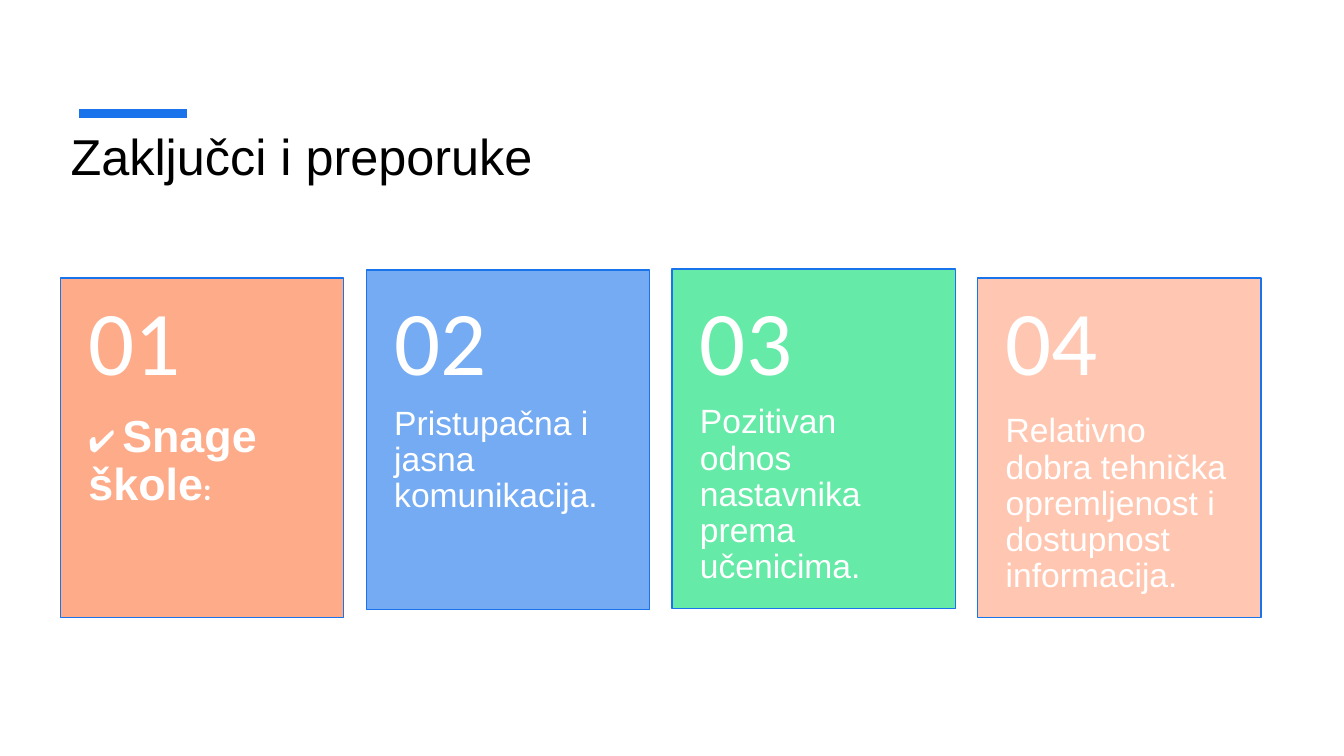
"""Builds the conclusions slide with four numbered cards."""
from lxml import etree
from pptx import Presentation
from pptx.dml.color import RGBColor
from pptx.enum.shapes import MSO_CONNECTOR, MSO_SHAPE
from pptx.enum.text import MSO_ANCHOR, MSO_AUTO_SIZE, PP_ALIGN
from pptx.oxml.ns import qn
from pptx.util import Pt

RECT = MSO_SHAPE.RECTANGLE
STRAIGHT = MSO_CONNECTOR.STRAIGHT
TOP, MIDDLE = MSO_ANCHOR.TOP, MSO_ANCHOR.MIDDLE
NO_FIT = MSO_AUTO_SIZE.NONE
LEFT = PP_ALIGN.LEFT

COLORS = {
    "text": "000000",
    "white": "FFFFFF",
    "blue": "1973EB",
    "orange": "FEAB8A",
    "sky": "75ABF3",
    "green": "65EAA8",
    "peach": "FFC7B1",
}
CARD_X, CARD_Y, CARD_STEP = 43.2, 198.6, 218.4
CARD_W, CARD_H, NUMBER_H = 202.4, 242.6, 97
CARDS = [
    ("orange", 0, [("✔️ ", 22, "Calibri"), ("Snage škole", 32, "Arial"), (":", 22, "Calibri")]),
    ("sky", -5.6, [("Pristupačna i jasna komunikacija.", 24, "Arial")]),
    ("green", -6.4, [("Pozitivan odnos nastavnika prema učenicima.", 24, "Arial")]),
    ("peach", 0, [("Relativno dobra tehnička opremljenost i dostupnost informacija.", 24, "Arial")]),
]


def rgb(name):
    return RGBColor.from_string(COLORS[name])


def add_text(s, x, y, h, runs, anchor, inset_top, inset_bottom):
    tf = s.shapes.add_textbox(Pt(x), Pt(y), Pt(CARD_W), Pt(h)).text_frame
    tf.word_wrap = True
    tf.vertical_anchor = anchor
    tf.margin_left = tf.margin_right = Pt(20)
    tf.margin_top, tf.margin_bottom = Pt(inset_top), Pt(inset_bottom)
    p = tf.paragraphs[0]
    p.line_spacing = 0.9
    p.font.color.rgb = rgb("white")
    p.font.bold = len(runs) > 1
    for text, size, font in runs:
        r = p.add_run()
        r.text = text
        r.font.size = Pt(size)
        r.font.name = font


prs = Presentation()
prs.slide_width, prs.slide_height = Pt(960), Pt(540)
s = prs.slides.add_slide(prs.slide_layouts[5])

title = s.shapes.title
title.left, title.top, title.width, title.height = Pt(43.2), Pt(80), Pt(857.6), Pt(86.4)
tf = title.text_frame
tf.text = "Zaključci i preporuke"
tf.auto_size = NO_FIT
tf.vertical_anchor = TOP
tf.margin_top = Pt(9)
p = tf.paragraphs[0]
p.alignment = LEFT
p.font.name, p.font.size = "Arial", Pt(36)
p.font.color.rgb = rgb("text")

accent = s.shapes.add_connector(STRAIGHT, Pt(56.4), Pt(81.2), Pt(133.4), Pt(81.2))
accent.line.color.rgb = rgb("blue")
accent.line.width = Pt(6)
etree.SubElement(accent._element.spPr, qn("a:effectLst"))

for i, (color, shift, runs) in enumerate(CARDS):
    x, y = CARD_X + i * CARD_STEP, CARD_Y + shift
    card = s.shapes.add_shape(RECT, Pt(x), Pt(y), Pt(CARD_W), Pt(CARD_H))
    card.shadow.inherit = False
    card.fill.solid()
    card.fill.fore_color.rgb = rgb(color)
    card.line.color.rgb = rgb("blue")
    card.line.width = Pt(1)
    add_text(s, x, y + NUMBER_H, CARD_H - NUMBER_H, runs, TOP, 0, 26)
    add_text(s, x, CARD_Y, NUMBER_H, [(f"{i + 1:02}", 65, "Calibri")], MIDDLE, 13, 13)

prs.save("out.pptx")
